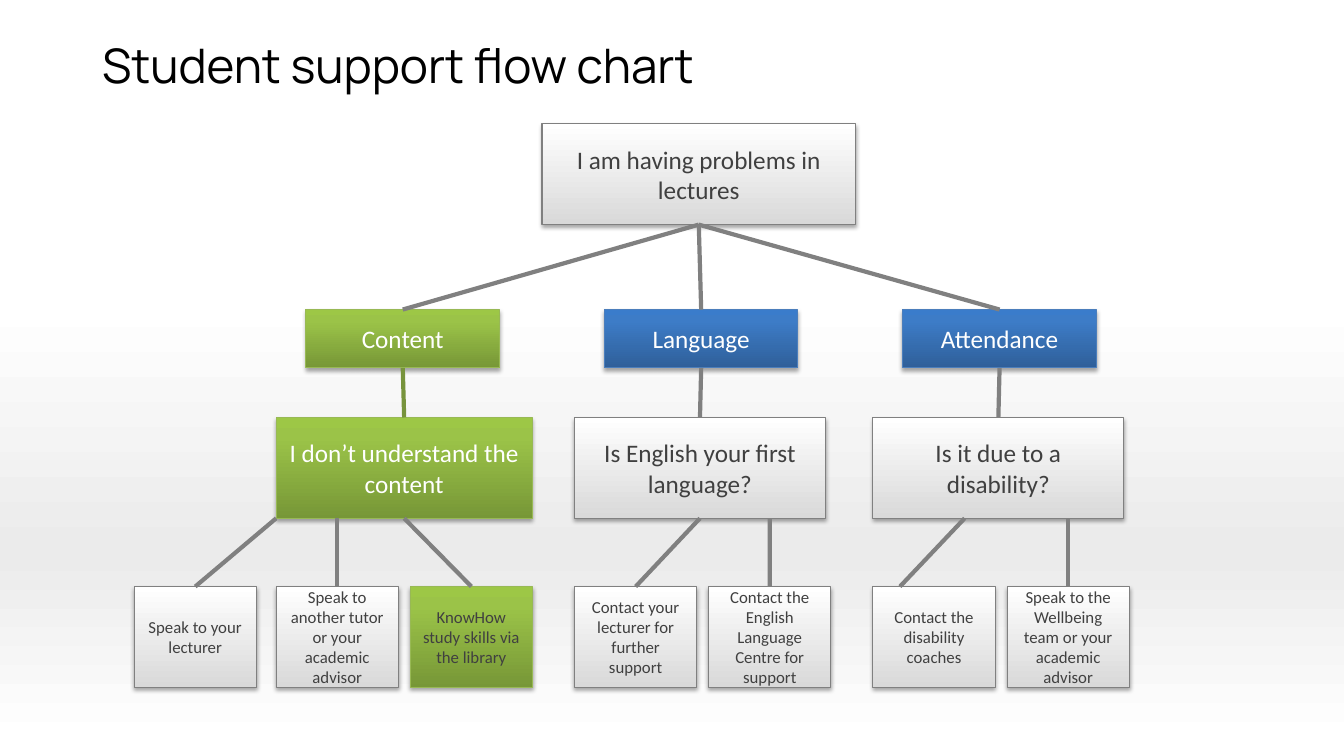
from lxml import etree
from pptx import Presentation
from pptx.dml.color import RGBColor
from pptx.enum.shapes import MSO_CONNECTOR, MSO_SHAPE
from pptx.enum.text import MSO_ANCHOR, PP_ALIGN
from pptx.oxml.ns import qn
from pptx.util import Cm, Pt

RECTANGLE = MSO_SHAPE.RECTANGLE
STRAIGHT = MSO_CONNECTOR.STRAIGHT
MIDDLE = MSO_ANCHOR.MIDDLE
CENTER = PP_ALIGN.CENTER
TOP, BOTTOM = 0, 2

COLORS = {
    "black": "000000", "white": "FFFFFF", "text": "404040",
    "mist": "EBEBEB", "silver": "D9D9D9", "grey": "808080",
    "green_dark": "779737", "green_mid": "9BC348", "green_light": "9DC746",
    "green_edge": "98B955", "green_link": "77933C",
    "blue_dark": "2F5F99", "blue_mid": "3D7CC7", "blue_light": "3A7CCB",
    "blue_edge": "4B7EBC",
}
STYLES = {
    "grey": ([(0, "silver"), (100, "white")], "grey"),
    "green": ([(0, "green_dark"), (80, "green_mid"), (100, "green_light")], "green_edge"),
    "blue": ([(0, "blue_dark"), (80, "blue_mid"), (100, "blue_light")], "blue_edge"),
}

ROOT_TOP, CATEGORY_TOP, QUESTION_TOP, LEAF_TOP = 3.12, 7.8, 10.52, 14.78
BOX_HEIGHT, CATEGORY_HEIGHT = 2.54, 1.47
CATEGORY_WIDTH, LEAF_WIDTH = 4.88, 3.08
FIRST_LEFT, BRANCH_PITCH, CATEGORY_INSET = 6.96, 7.52, 0.75
SECOND_LEAF = 3.38
QUESTION_BOTTOM = QUESTION_TOP + BOX_HEIGHT

# Leaf: wording, style, offset, link start and link end; None means mid-side.
BRANCHES = [
    ("Content", "green", "I don’t understand the content", "green", "white", 6.45, "green_link", [
        ("Speak to your lecturer", "grey", -3.58, 0, None),
        ("Speak to another tutor or your academic advisor", "grey", 0, LEAF_WIDTH / 2, None),
        ("KnowHow study skills via the library", "green", SECOND_LEAF, None, None),
    ]),
    ("Language", "blue", "Is English your first language?", "grey", "text", 6.32, "grey", [
        ("Contact your lecturer for further support", "grey", 0, None, None),
        ("Contact the English Language Centre for support", "grey", SECOND_LEAF,
         SECOND_LEAF + LEAF_WIDTH / 2, None),
    ]),
    ("Attendance", "blue", "Is it due to a disability?", "grey", "text", 6.32, "grey", [
        ("Contact the disability coaches", "grey", 0, 2.31, 0.68),
        ("Speak to the Wellbeing team or your academic advisor", "grey", SECOND_LEAF,
         SECOND_LEAF + LEAF_WIDTH / 2, None),
    ]),
]


def paint_gradient(holder, stops):
    gradient = etree.Element(qn("a:gradFill"), rotWithShape="1")
    stop_list = etree.SubElement(gradient, qn("a:gsLst"))
    for position, color in stops:
        stop = etree.SubElement(stop_list, qn("a:gs"), pos=str(position * 1000))
        etree.SubElement(stop, qn("a:srgbClr"), val=COLORS[color])
    etree.SubElement(gradient, qn("a:lin"), ang="16200000", scaled="0")
    holder.replace(holder.find(qn("a:solidFill")), gradient)


def add_box(wording, style, left, top, width, height, size, color):
    stops, edge = STYLES[style]
    box = page.shapes.add_shape(RECTANGLE, Cm(left), Cm(top), Cm(width), Cm(height))
    box.fill.solid()
    paint_gradient(box._element.spPr, stops)
    box.line.color.rgb = RGBColor.from_string(COLORS[edge])
    box.line.width = Pt(0.75)
    box.shadow.inherit = False
    effects = box._element.spPr.find(qn("a:effectLst"))
    shadow = etree.SubElement(effects, qn("a:outerShdw"), blurRad="39370",
                              dist="22860", dir="5400000", rotWithShape="0")
    shade = etree.SubElement(shadow, qn("a:srgbClr"), val=COLORS["black"])
    etree.SubElement(shade, qn("a:alpha"), val="35000")
    frame = box.text_frame
    frame.word_wrap = True
    frame.vertical_anchor = MIDDLE
    para = frame.paragraphs[0]
    para.alignment = CENTER
    span = para.add_run()
    span.text = wording
    span.font.name = "Calibri"
    span.font.size = Pt(size)
    span.font.color.rgb = RGBColor.from_string(COLORS[color])
    return box


deck = Presentation()
deck.slide_width = Cm(33.87)
deck.slide_height = Cm(19.05)
page = deck.slides.add_slide(deck.slide_layouts[6])
page.background.fill.solid()
paint_gradient(page.element.find(".//" + qn("p:bgPr")),
               [(2, "white"), (27, "mist"), (60, "white")])

title = page.shapes.add_textbox(Cm(0.99), Cm(0.43), Cm(18.08), Cm(2.41))
title.text_frame.word_wrap = True
title.text_frame.vertical_anchor = MIDDLE
para = title.text_frame.paragraphs[0]
para.alignment = CENTER
span = para.add_run()
span.text = "Student support flow chart"
span.font.name = "Manrope"
span.font.size = Pt(34)
span.font.color.rgb = RGBColor.from_string(COLORS["black"])

root = add_box("I am having problems in lectures", "grey",
               13.66, ROOT_TOP, 7.9, BOX_HEIGHT, 18, "text")
links = []
for index, branch in enumerate(BRANCHES):
    name, name_style, wording, style, color, width, link_color, leaves = branch
    left = FIRST_LEFT + index * BRANCH_PITCH
    category = add_box(name, name_style, left + CATEGORY_INSET, CATEGORY_TOP,
                       CATEGORY_WIDTH, CATEGORY_HEIGHT, 18, "white")
    question = add_box(wording, style, left, QUESTION_TOP, width, BOX_HEIGHT, 18, color)
    links.append((root, category, left, None, None, "grey"))
    links.append((category, question, left, None, None, link_color))
    for leaf_wording, leaf_style, offset, start, end in leaves:
        leaf = add_box(leaf_wording, leaf_style, left + offset, LEAF_TOP,
                       LEAF_WIDTH, BOX_HEIGHT, 12, "text")
        links.append((question, leaf, left, start, end, "grey"))

for parent, child, left, start, end, color in links:
    link = page.shapes.add_connector(STRAIGHT, Cm(left + (start or 0)), Cm(QUESTION_BOTTOM),
                                     Cm(left + (end or 0)), Cm(LEAF_TOP))
    if start is None:
        link.begin_connect(parent, BOTTOM)
    if end is None:
        link.end_connect(child, TOP)
    link.line.color.rgb = RGBColor.from_string(COLORS[color])
    link.line.width = Pt(3)
    etree.SubElement(link._element.spPr, qn("a:effectLst"))

deck.save("out.pptx")
